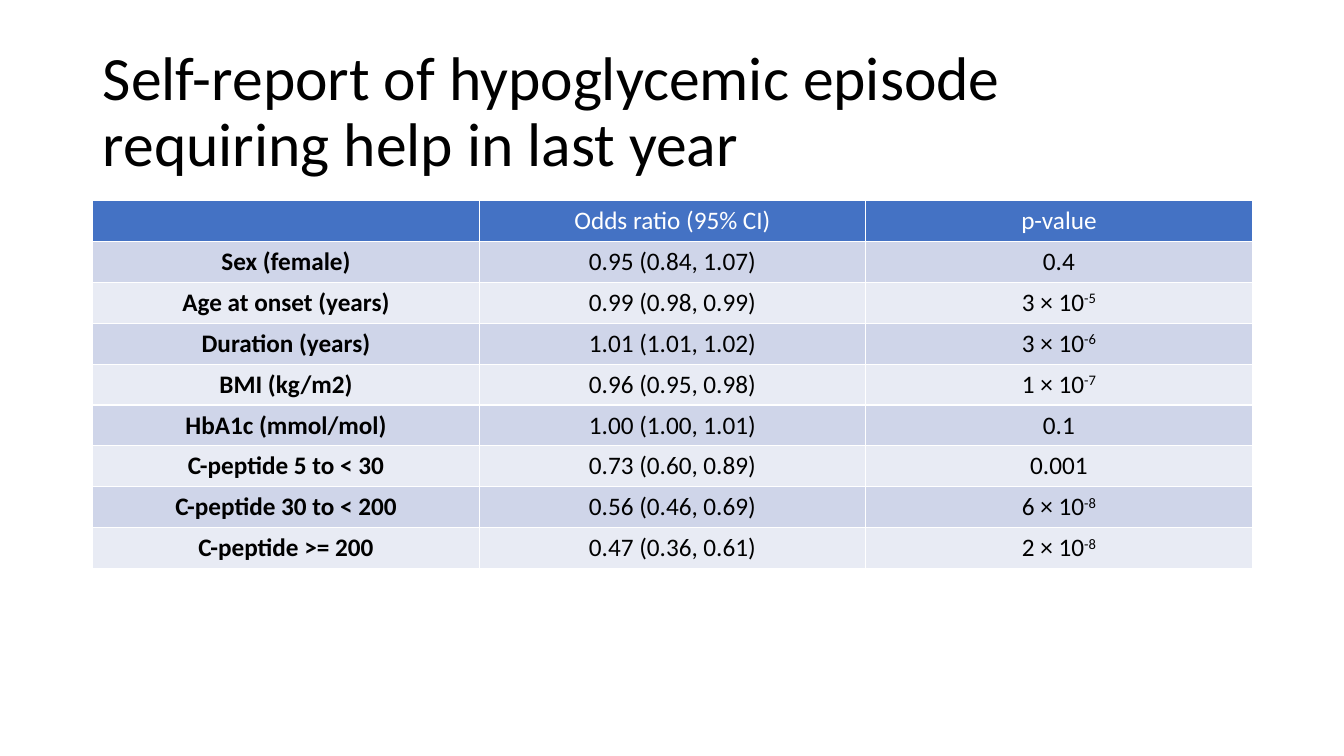
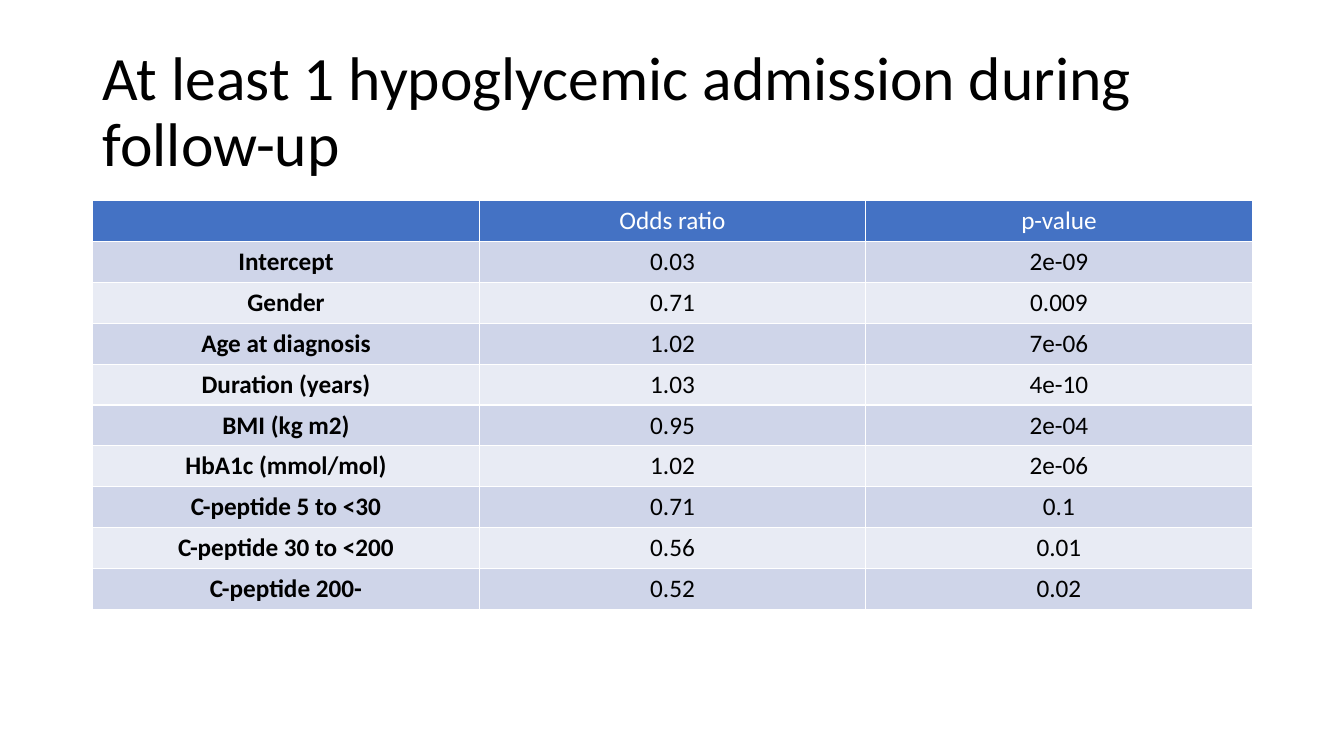
from pptx import Presentation
from pptx.dml.color import RGBColor
from pptx.enum.text import MSO_ANCHOR, MSO_AUTO_SIZE, PP_ALIGN
from pptx.oxml.ns import qn
from pptx.util import Inches, Pt
from lxml.etree import SubElement

BLACK = RGBColor(0x00, 0x00, 0x00)
WHITE = RGBColor(0xFF, 0xFF, 0xFF)
BLUE = RGBColor(0x44, 0x72, 0xC4)
BANDS = (RGBColor(0xCF, 0xD5, 0xE9), RGBColor(0xE8, 0xEB, 0xF4))

REPORT = [
    ("", "Odds ratio (95% CI)", "p-value"),
    ("Sex (female)", "0.95 (0.84, 1.07)", "0.4"),
    ("Age at onset (years)", "0.99 (0.98, 0.99)", "3 × 10^-5"),
    ("Duration (years)", "1.01 (1.01, 1.02)", "3 × 10^-6"),
    ("BMI (kg/m2)", "0.96 (0.95, 0.98)", "1 × 10^-7"),
    ("HbA1c (mmol/mol)", "1.00 (1.00, 1.01)", "0.1"),
    ("C-peptide 5 to < 30", "0.73 (0.60, 0.89)", "0.001"),
    ("C-peptide 30 to < 200", "0.56 (0.46, 0.69)", "6 × 10^-8"),
    ("C-peptide >= 200", "0.47 (0.36, 0.61)", "2 × 10^-8"),
]

ADMIT = [
    ("", "Odds ratio", "p-value"),
    ("Intercept", "0.03", "2e-09"),
    ("Gender", "0.71", "0.009"),
    ("Age at diagnosis", "1.02", "7e-06"),
    ("Duration (years)", "1.03", "4e-10"),
    ("BMI (kg m2)", "0.95", "2e-04"),
    ("HbA1c (mmol/mol)", "1.02", "2e-06"),
    ("C-peptide 5 to <30", "0.71", "0.1"),
    ("C-peptide 30 to <200", "0.56", "0.01"),
    ("C-peptide 200-", "0.52", "0.02"),
]


class Deck:
    font = "Calibri"
    left = Inches(0.92)
    width = Inches(11.5)
    row = Inches(0.4)

    def __init__(self):
        self.show = Presentation()
        self.show.slide_width = Inches(13.33)
        self.show.slide_height = Inches(7.5)
        self.slide = None

    def page(self, title):
        self.slide = self.show.slides.add_slide(self.show.slide_layouts[5])
        box = self.slide.shapes.title
        box.left, box.top = self.left, Inches(0.4)
        box.width, box.height = self.width, Inches(1.45)
        frame = box.text_frame
        frame.auto_size = MSO_AUTO_SIZE.NONE
        frame.word_wrap = True
        frame.vertical_anchor = MSO_ANCHOR.MIDDLE
        para = frame.paragraphs[0]
        para.alignment = PP_ALIGN.LEFT
        para.line_spacing = 0.9
        self.run(para, title, 44, BLACK)

    def run(self, para, text, size, color, bold=False):
        run = para.add_run()
        run.text = text
        font = run.font
        font.name, font.size, font.bold = self.font, Pt(size), bold
        font.color.rgb = color
        return run

    def table(self, data):
        cols = len(data[0])
        grid = self.slide.shapes.add_table(
            len(data), cols, self.left, Inches(1.99),
            self.width, self.row * len(data)).table
        for r, line in enumerate(data):
            fill = BANDS[(r - 1) % 2] if r else BLUE
            for c, text in enumerate(line):
                self.cell(grid.cell(r, c), text, fill,
                          BLACK if r else WHITE, r > 0 and c == 0)

    def cell(self, cell, text, fill, color, bold):
        self.edge(cell)
        cell.fill.solid()
        cell.fill.fore_color.rgb = fill
        para = cell.text_frame.paragraphs[0]
        para.alignment = PP_ALIGN.CENTER
        base, _, power = text.partition("^")
        if base:
            self.run(para, base, 18, color, bold)
        if power:
            run = self.run(para, power, 18, color, bold)
            run._r.get_or_add_rPr().set("baseline", "30000")

    def edge(self, cell):
        props = cell._tc.get_or_add_tcPr()
        for side in ("lnL", "lnR", "lnT", "lnB"):
            line = SubElement(props, qn(f"a:{side}"), w=str(Pt(1)))
            solid = SubElement(line, qn("a:solidFill"))
            SubElement(solid, qn("a:srgbClr"), val=str(WHITE))


def main():
    deck = Deck()
    deck.page("Self-report of hypoglycemic episode requiring help in last year")
    deck.table(REPORT)
    deck.page("At least 1 hypoglycemic admission during follow-up")
    deck.table(ADMIT)
    deck.show.save("out.pptx")


if __name__ == "__main__":
    main()
